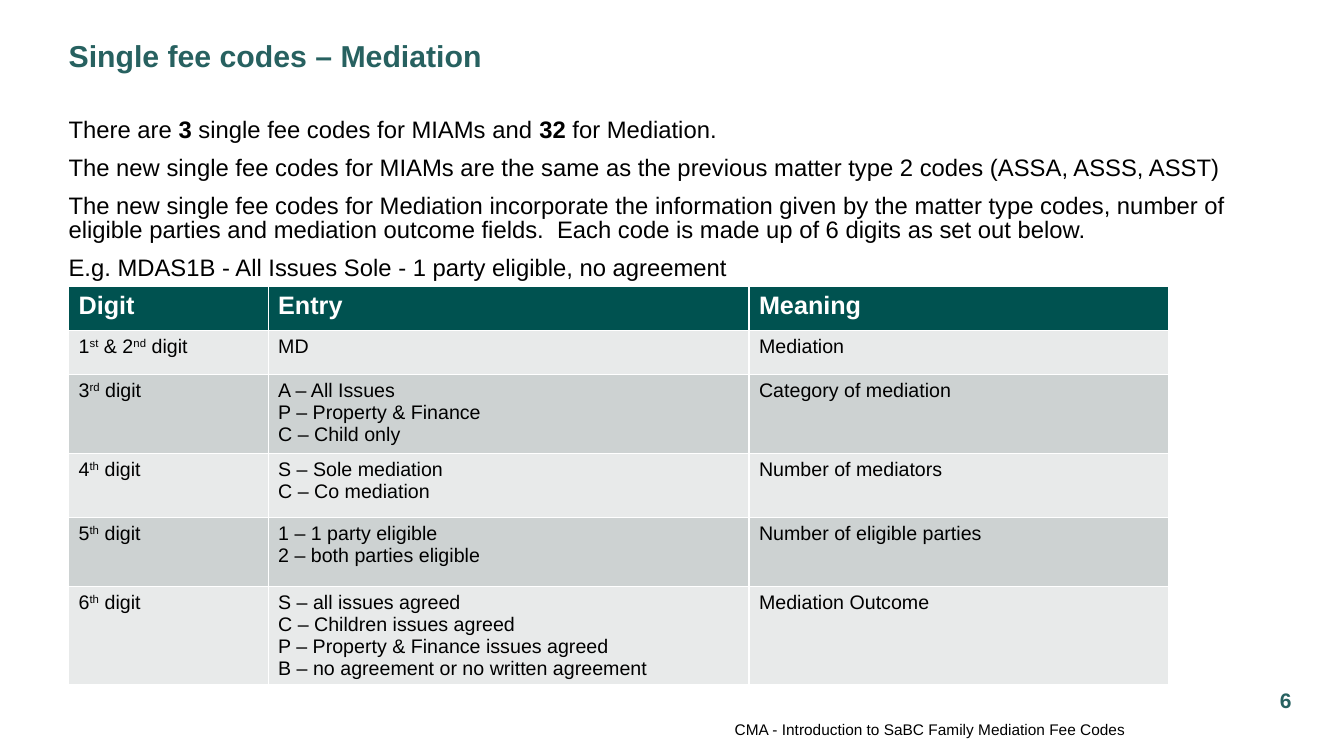
import pptx
import pptx.dml.color
import pptx.enum.text
import pptx.oxml
import pptx.oxml.ns
import pptx.util

Pt = pptx.util.Pt
RGB = pptx.dml.color.RGBColor.from_string
PP_ALIGN = pptx.enum.text.PP_ALIGN
ANCHOR = pptx.enum.text.MSO_ANCHOR

COLORS = {"title": "276160", "text": "000000", "header": "005250",
          "light": "E8EAEA", "dark": "CDD2D2", "white": "FFFFFF"}
LEFT = 49

intro = [
    "There are |3| single fee codes for MIAMs and |32| for Mediation.",
    "The new single fee codes for MIAMs are the same as the previous matter type 2 codes (ASSA, ASSS, ASST)",
    "The new single fee codes for Mediation incorporate the information given by the matter type codes, "
    "number of eligible parties and mediation outcome fields.  Each code is made up of 6 digits as set out below.",
    "E.g. MDAS1B - All Issues Sole - 1 party eligible, no agreement",
]
col_widths = [142.5, 343.5, 300]
rows = [
    (31.5, ["Digit"], ["Entry"], ["Meaning"]),
    (31.5, ["1|st| & 2|nd| digit"], ["MD"], ["Mediation"]),
    (56.5, ["3|rd| digit"], ["A – All Issues", "P – Property & Finance", "C – Child only"],
     ["Category of mediation"]),
    (45.5, ["4|th| digit"], ["S – Sole mediation", "C – Co mediation"], ["Number of mediators"]),
    (49.5, ["5|th| digit"], ["1 – 1 party eligible", "2 – both parties eligible"],
     ["Number of eligible parties"]),
    (70, ["6|th| digit"], ["S – all issues agreed", "C – Children issues agreed",
                           "P – Property & Finance issues agreed",
                           "B – no agreement or no written agreement"], ["Mediation Outcome"]),
]


def write(tf, lines, size, color, bold=False, align=PP_ALIGN.LEFT, raised=False):
    """Fill a frame; text between bars is bold, or superscript if raised."""
    for i, line in enumerate(lines):
        p = tf.paragraphs[0] if i == 0 else tf.add_paragraph()
        p.alignment = align
        p.font.name = "Arial"
        p.font.size = Pt(size)
        p.font.bold = bold
        p.font.color.rgb = RGB(COLORS[color])
        for j, piece in enumerate(line.split("|")):
            r = p.add_run()
            r.text = piece
            if j % 2 and raised:
                r._r.get_or_add_rPr().set("baseline", "30000")
            elif j % 2:
                r.font.bold = True


def place(sp, left, top, width, height, anchor=ANCHOR.MIDDLE):
    """Position a text shape without insets and return its frame."""
    sp.left, sp.top, sp.width, sp.height = Pt(left), Pt(top), Pt(width), Pt(height)
    tf = sp.text_frame
    tf.word_wrap = True
    tf.auto_size = pptx.enum.text.MSO_AUTO_SIZE.NONE
    tf.margin_left = tf.margin_right = tf.margin_top = tf.margin_bottom = 0
    tf.vertical_anchor = anchor
    return tf


prs = pptx.Presentation()
prs.slide_width, prs.slide_height = Pt(960), Pt(540)
s = prs.slides.add_slide(prs.slide_layouts[5])

tf = place(s.shapes.title, LEFT, 25.2, 844.5, 28.8)
write(tf, ["Single fee codes – Mediation"], 21.6, "title", bold=True)

tf = place(s.shapes.add_textbox(0, 0, 0, 0), LEFT, 85, 844.5, 106.5, ANCHOR.TOP)
write(tf, intro, 17, "text")
for p in tf.paragraphs:
    p.line_spacing = 0.84
    p.space_after = Pt(10)

tf = place(s.shapes.add_textbox(0, 0, 0, 0), 232, 514, 572, 14.4)
write(tf, ["CMA - Introduction to SaBC Family Mediation Fee Codes"], 11, "text", align=PP_ALIGN.RIGHT)

tf = place(s.shapes.add_textbox(0, 0, 0, 0), 900.7, 486, 35.3, 28.8)
write(tf, ["6"], 15, "title", bold=True, align=PP_ALIGN.CENTER)

table = s.shapes.add_table(len(rows), len(col_widths), Pt(LEFT), Pt(204.5), Pt(sum(col_widths)),
                           Pt(sum(row[0] for row in rows))).table
for col, width in zip(table.columns, col_widths):
    col.width = Pt(width)
for i, (height, *cells) in enumerate(rows):
    table.rows[i].height = Pt(height)
    fill = "header" if i == 0 else "light" if i % 2 else "dark"
    for j, lines in enumerate(cells):
        cell = table.cell(i, j)
        if i == 0:
            write(cell.text_frame, lines, 18, "white", bold=True)
        else:
            write(cell.text_frame, lines, 14, "text", raised=True)
        tcPr = cell._tc.get_or_add_tcPr()
        for side in ("lnL", "lnR", "lnT", "lnB"):
            tcPr.append(pptx.oxml.parse_xml(
                f'<a:{side} {pptx.oxml.ns.nsdecls("a")} w="12700"><a:solidFill>'
                f'<a:srgbClr val="{COLORS["white"]}"/></a:solidFill></a:{side}>'))
        cell.fill.solid()
        cell.fill.fore_color.rgb = RGB(COLORS[fill])

prs.save("out.pptx")
